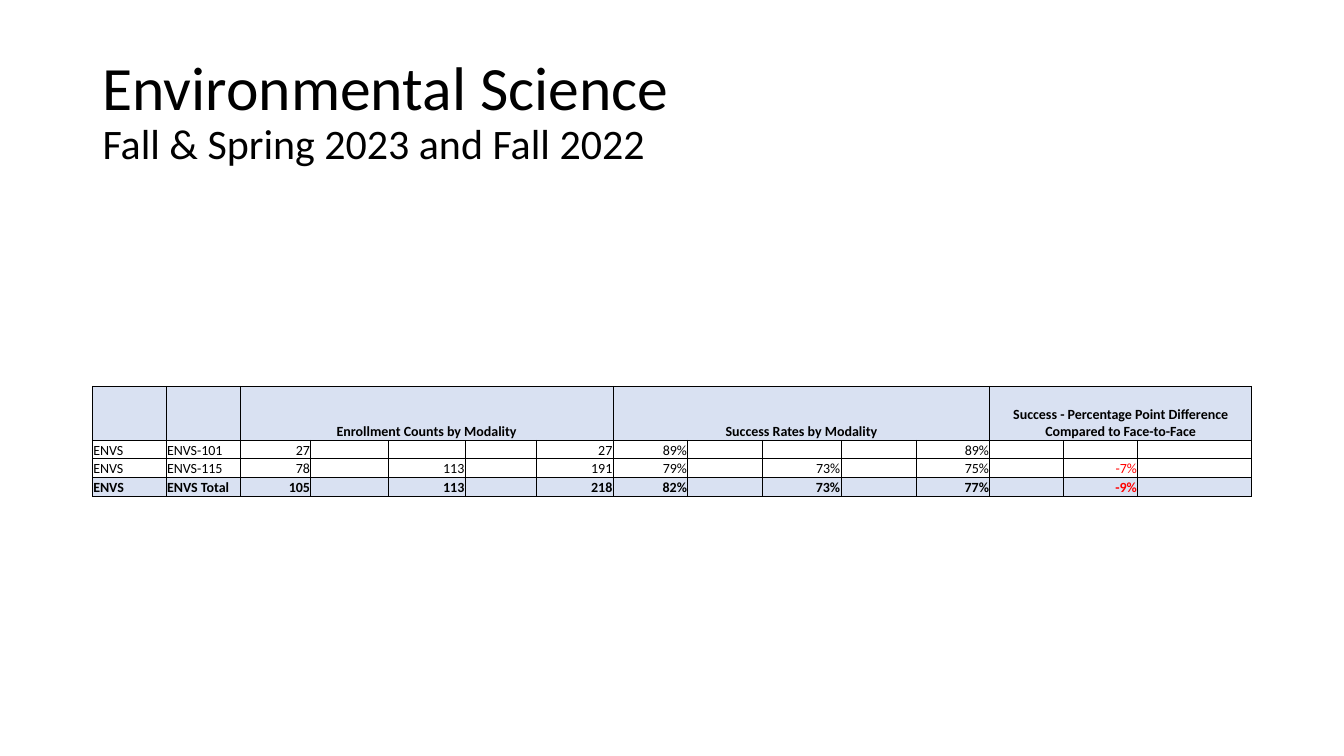
import pptx
import pptx.dml.color
import pptx.enum.text
import pptx.oxml.ns
import pptx.util
from lxml import etree

Cm = pptx.util.Cm
Pt = pptx.util.Pt
RGBColor = pptx.dml.color.RGBColor
Align = pptx.enum.text.PP_ALIGN
Anchor = pptx.enum.text.MSO_ANCHOR
qn = pptx.oxml.ns.qn

BLACK = RGBColor(0x00, 0x00, 0x00)
RED = RGBColor(0xFF, 0x00, 0x00)
PALE_BLUE = RGBColor(0xD9, 0xE1, 0xF2)
FONT = "Calibri"
TABLE_SIZE = 10

TITLE_LINES = [("Environmental Science", 44), ("Fall & Spring 2023 and Fall 2022", 30)]

# Heading, first column, number of columns
HEADINGS = [
    ("Enrollment Counts by Modality", 2, 5),
    ("Success Rates by Modality", 7, 5),
    ("Success - Percentage Point Difference Compared to Face-to-Face", 12, 3),
]
COURSES = [
    ["ENVS", "ENVS-101", "27", "", "", "", "27", "89%", "", "", "", "89%", "", "", ""],
    ["ENVS", "ENVS-115", "78", "", "113", "", "191", "79%", "", "73%", "", "75%", "", "-7%", ""],
    ["ENVS", "ENVS Total", "105", "", "113", "", "218", "82%", "", "73%", "", "77%", "", "-9%", ""],
]
COLUMN_WIDTHS = [1.86, 1.86, 1.78, 1.96, 1.93, 1.8, 1.93, 1.88,
                 1.88, 1.98, 1.9, 1.85, 1.85, 1.88, 2.87]
ROW_HEIGHTS = [1.36] + [0.47] * len(COURSES)
LEFT, TABLE_TOP = 2.33, 9.73


def add_span(para, text, size, color=BLACK, bold=False):
    span = para.add_run()
    span.text = text
    span.font.name = FONT
    span.font.size = Pt(size)
    span.font.color.rgb = color
    span.font.bold = bold


def add_borders(cell):
    properties = cell._tc.get_or_add_tcPr()
    for side in ("a:lnL", "a:lnR", "a:lnT", "a:lnB"):
        line = etree.SubElement(properties, qn(side), w=str(Pt(0.5)))
        fill = etree.SubElement(line, qn("a:solidFill"))
        etree.SubElement(fill, qn("a:srgbClr"), val=str(BLACK))


def fill_cell(cell, text, align, shaded):
    cell.margin_left = cell.margin_right = cell.margin_top = Cm(0.02)
    cell.margin_bottom = 0
    cell.vertical_anchor = Anchor.BOTTOM
    add_borders(cell)
    if shaded:
        cell.fill.solid()
        cell.fill.fore_color.rgb = PALE_BLUE
    else:
        cell.fill.background()
    para = cell.text_frame.paragraphs[0]
    para.alignment = align
    if text:
        add_span(para, text, TABLE_SIZE, RED if text.startswith("-") else BLACK, shaded)
    else:
        # An empty cell takes its row height from the end-of-paragraph size
        etree.SubElement(para._p, qn("a:endParaRPr"), sz=str(TABLE_SIZE * 100))


def add_title(page):
    title = page.shapes.title
    title.left, title.top, title.width, title.height = Cm(LEFT), Cm(1.01), Cm(29.21), Cm(3.68)
    frame = title.text_frame
    frame.word_wrap = True
    frame.auto_size = pptx.enum.text.MSO_AUTO_SIZE.NONE
    frame.vertical_anchor = Anchor.MIDDLE
    para = frame.paragraphs[0]
    para.alignment = Align.LEFT
    para.line_spacing = 0.9
    for number, (text, size) in enumerate(TITLE_LINES):
        if number:
            para.add_line_break()
        add_span(para, text, size)


def add_course_table(page):
    heading_row = [""] * len(COLUMN_WIDTHS)
    for text, first, count in HEADINGS:
        heading_row[first] = text
    rows = [heading_row] + COURSES
    table = page.shapes.add_table(
        len(rows), len(COLUMN_WIDTHS), Cm(LEFT), Cm(TABLE_TOP),
        Cm(sum(COLUMN_WIDTHS)), Cm(sum(ROW_HEIGHTS))).table
    table.first_row = table.horz_banding = False
    for column, width in zip(table.columns, COLUMN_WIDTHS):
        column.width = Cm(width)
    for row, height in zip(table.rows, ROW_HEIGHTS):
        row.height = Cm(height)
    for row_number, row in enumerate(rows):
        shaded = row_number in (0, len(rows) - 1)
        for column_number, text in enumerate(row):
            if row_number == 0:
                align = Align.CENTER
            else:
                align = Align.LEFT if column_number < 2 else Align.RIGHT
            fill_cell(table.cell(row_number, column_number), text, align, shaded)
    for text, first, count in HEADINGS:
        table.cell(0, first).merge(table.cell(0, first + count - 1))


def main():
    deck = pptx.Presentation()
    deck.slide_width, deck.slide_height = Cm(33.87), Cm(19.05)
    page = deck.slides.add_slide(deck.slide_layouts.get_by_name("Title Only"))
    add_title(page)
    add_course_table(page)
    deck.save("out.pptx")


if __name__ == "__main__":
    main()
